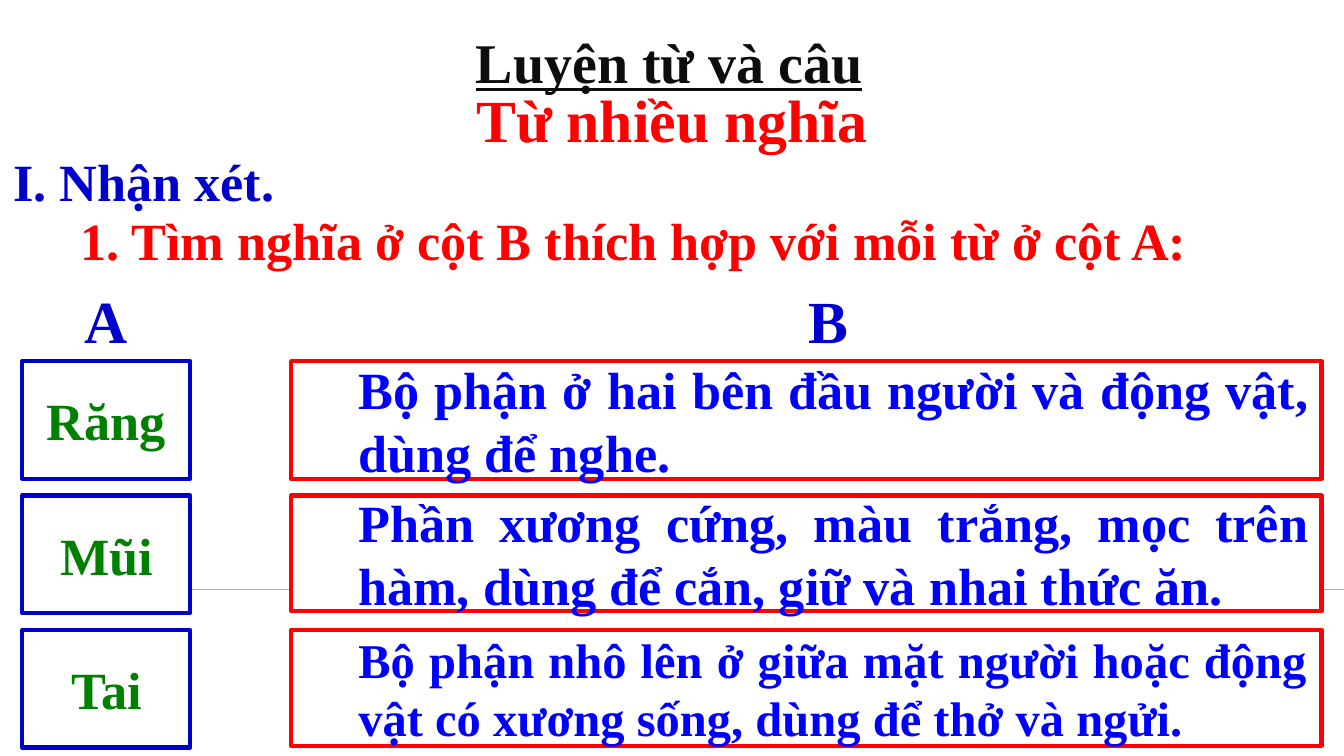
from pptx import Presentation
from pptx.dml.color import RGBColor
from pptx.enum.shapes import MSO_CONNECTOR, MSO_SHAPE
from pptx.enum.text import MSO_ANCHOR, MSO_AUTO_SIZE, PP_ALIGN
from pptx.oxml.ns import qn
from pptx.util import Pt
from lxml.etree import SubElement

C = {"white": "FFFFFF", "navy": "0000CC", "blue": "0000FF", "red": "FF0000",
     "green": "008000", "ink": "0D0D0D", "orange": "F0A22E"}


def rgb(name):
    return RGBColor.from_string(C[name])


def write(sp, text, size, color, align=PP_ALIGN.LEFT, anchor=MSO_ANCHOR.TOP, left=7.2):
    tf = sp.text_frame
    tf.word_wrap = True
    tf.auto_size = MSO_AUTO_SIZE.NONE
    tf.vertical_anchor = anchor
    tf.margin_left, tf.margin_right = Pt(left), Pt(7.2)
    tf.margin_top = tf.margin_bottom = Pt(3.6)
    p = tf.paragraphs[0]
    p.alignment = align
    p.line_spacing = 1.0
    p.space_before = Pt(0)
    r = p.add_run()
    r.text = text
    r.font.name = "Times New Roman"
    r.font.size = Pt(size)
    r.font.bold = True
    r.font.color.rgb = rgb(color)
    return r


prs = Presentation()
prs.slide_width, prs.slide_height = Pt(720), Pt(405)
s = prs.slides.add_slide(prs.slide_layouts[5])
s.background.fill.solid()
s.background.fill.fore_color.rgb = rgb("white")

rule = s.shapes.add_connector(MSO_CONNECTOR.STRAIGHT, Pt(40), Pt(316), Pt(720), Pt(316))
rule.line.color.rgb = rgb("orange")
rule.line.width = Pt(0.75)
SubElement(rule._element.spPr, qn("a:effectLst"))

title = s.shapes.title
title.left, title.top, title.width, title.height = Pt(0), Pt(40.5), Pt(720), Pt(46)
write(title, "Từ nhiều nghĩa", 32, "red", PP_ALIGN.CENTER)

labels = [
    ("Luyện từ và câu", -1.5, 11, 720, 44, 30, "ink", PP_ALIGN.CENTER),
    ("I. Nhận xét.", 0, 76.5, 427, 41, 28, "navy", PP_ALIGN.LEFT),
    ("1. Tìm nghĩa ở cột B thích hợp với mỗi từ ở cột A:", 36, 108, 618, 41, 28, "red", PP_ALIGN.LEFT),
    ("A", 12, 148.5, 90, 46, 32, "navy", PP_ALIGN.CENTER),
    ("B", 168, 148.5, 552, 46, 32, "navy", PP_ALIGN.CENTER),
]
for text, x, y, w, h, size, color, align in labels:
    sp = s.shapes.add_textbox(Pt(x), Pt(y), Pt(w), Pt(h))
    r = write(sp, text, size, color, align)
    r.font.underline = True if color == "ink" else None

rows = [
    ("Răng", "Bộ phận ở hai bên đầu người và động vật, dùng để nghe.", 28, 63),
    ("Mũi", "Phần xương cứng, màu trắng, mọc trên hàm, dùng để cắn, giữ và nhai thức ăn.", 28, 62),
    ("Tai", "Bộ phận nhô lên ở giữa mặt người hoặc động vật có xương sống, dùng để thở và ngửi.", 26, 62),
]
for i, (word, meaning, size, height) in enumerate(rows):
    y = 193.5 + 72 * i
    cells = [
        (word, 12, 90, 63, 28, "navy", "green", PP_ALIGN.CENTER, 7.2),
        (meaning, 156, 552, height, size, "red", "blue", PP_ALIGN.JUSTIFY, 36),
    ]
    for text, x, w, h, pts, border, color, align, left in cells:
        sp = s.shapes.add_shape(MSO_SHAPE.RECTANGLE, Pt(x), Pt(y), Pt(w), Pt(h))
        sp.shadow.inherit = False
        sp.fill.solid()
        sp.fill.fore_color.rgb = rgb("white")
        sp.line.color.rgb = rgb(border)
        sp.line.width = Pt(2.25)
        write(sp, text, pts, color, align, MSO_ANCHOR.MIDDLE, left)

prs.save("out.pptx")
